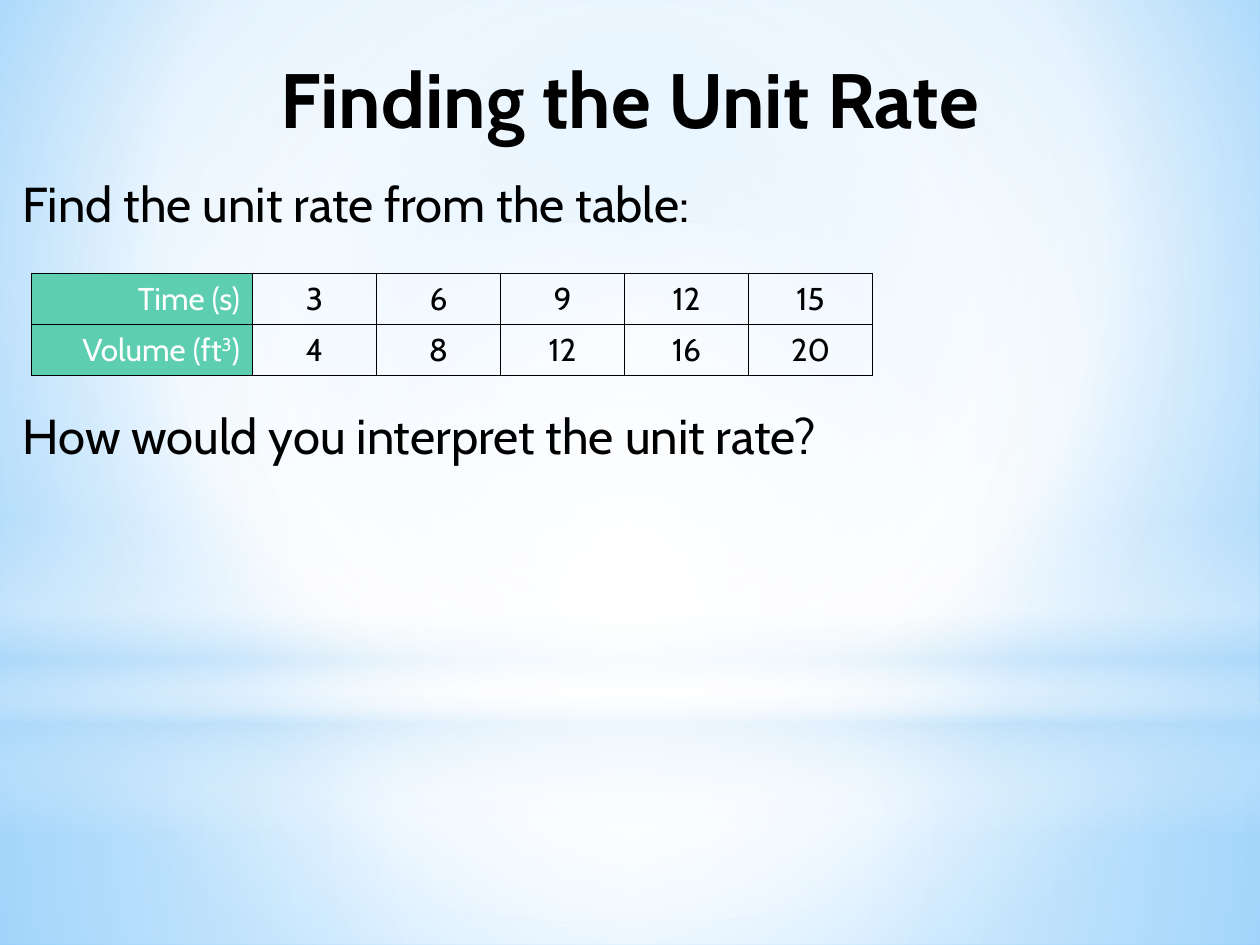
from dataclasses import dataclass

import pptx
import pptx.dml.color
import pptx.enum.shapes
import pptx.enum.text
import pptx.oxml.ns
import pptx.oxml.xmlchemy
import pptx.util
from lxml import etree
from pptx.util import Cm, Pt

ALIGN = pptx.enum.text.PP_ALIGN
SHAPE = pptx.enum.shapes.MSO_SHAPE
qn = pptx.oxml.ns.qn


@dataclass(frozen=True)
class Theme:
    font: str = "Cabin"
    ink: str = "000000"
    label_text: str = "FFFFFF"
    label_fill: str = "5DCEAF"
    white: str = "FFFFFF"
    haze: str = "B4DCFA"
    sky: str = "9ED5FF"
    deep_sky: str = "5BB9FF"
    title_size: int = 44
    body_size: int = 28
    table_size: int = 18


THEME = Theme()
CENTRE = (50, 50, 50, 50)

# Outline, (left, top, width, height) in cm, (position, colour, opacity) stops, focus
GLOWS = [
    (SHAPE.RECTANGLE, (0, 14.17, 25.4, 4.88),
     [(0, THEME.white, 91), (37, THEME.white, 76), (100, THEME.haze, 79)], CENTRE),
    (SHAPE.RECTANGLE, (0, 0, 25.4, 14.17),
     [(0, THEME.white, 89), (48, THEME.white, 62), (100, THEME.haze, 79)], CENTRE),
    (SHAPE.RECTANGLE, (0, 10.46, 25.4, 6.35),
     [(0, THEME.white, 0), (29, THEME.white, 30), (45, THEME.haze, 40),
      (55, THEME.white, 26), (65, THEME.haze, 60), (100, THEME.white, 0)], None),
    (SHAPE.OVAL, (0, 4.45, 25.4, 14.17),
     [(0, THEME.white, 100), (56, THEME.white, 0)], CENTRE),
]

RATES = [
    ("Time (s)", [3, 6, 9, 12, 15]),
    ("Volume (ft^3^)", [4, 8, 12, 16, 20]),
]


def child(parent, tag, **attributes):
    element = etree.SubElement(parent, qn(tag))
    for key, value in attributes.items():
        element.set(key, str(value))
    return element


def set_gradient(fill, owner, stops, focus):
    """Fill with a circle around focus, or from top to bottom when focus is None."""
    fill.gradient()
    gradient = next(owner.iter(qn("a:gradFill")))
    for part in list(gradient):
        gradient.remove(part)
    stop_list = child(gradient, "a:gsLst")
    for position, colour, opacity in stops:
        stop = child(stop_list, "a:gs", pos=position * 1000)
        tint = child(stop, "a:srgbClr", val=colour)
        if opacity < 100:
            child(tint, "a:alpha", val=opacity * 1000)
    if focus is None:
        child(gradient, "a:lin", ang=5400000, scaled=0)
    else:
        circle = child(gradient, "a:path", path="circle")
        edges = {edge: share * 1000 for edge, share in zip("ltrb", focus)}
        child(circle, "a:fillToRect", **edges)


def add_backdrop(slide):
    """Colour the background and lay the glows behind all text."""
    sky_stops = [(0, THEME.sky, 100), (60, THEME.white, 100), (100, THEME.deep_sky, 100)]
    set_gradient(slide.background.fill, slide.element, sky_stops, (20, 10, 20, 60))
    tree = slide.shapes.element
    for depth, (outline, box, stops, focus) in enumerate(GLOWS, start=2):
        glow = slide.shapes.add_shape(outline, *map(Cm, box))
        glow.shadow.inherit = False
        glow.line.fill.background()
        set_gradient(glow.fill, glow.element, stops, focus)
        tree.insert(depth, glow.element)


def style_paragraph(paragraph, size, colour, alignment, bold=False):
    paragraph.alignment = alignment
    paragraph.space_before = Pt(0)
    font = paragraph.font
    font.name, font.size, font.bold = THEME.font, Pt(size), bold
    font.color.rgb = pptx.dml.color.RGBColor.from_string(colour)


def place(holder, left, top, width, height):
    holder.left, holder.top = Cm(left), Cm(top)
    holder.width, holder.height = Cm(width), Cm(height)


def set_title(title, text):
    place(title, 1.27, 0.76, 22.86, 2.41)
    title.text_frame.text = text
    style_paragraph(title.text_frame.paragraphs[0], THEME.title_size, THEME.ink,
                    ALIGN.CENTER, bold=True)


def set_prompt(prompt, text, top, alignment):
    """Place a body line without bullet or indent."""
    place(prompt, 0.2, top, 23.93, 1.45)
    frame = prompt.text_frame
    frame.text = text
    frame.auto_size = pptx.enum.text.MSO_AUTO_SIZE.SHAPE_TO_FIT_TEXT
    paragraph = frame.paragraphs[0]
    style_paragraph(paragraph, THEME.body_size, THEME.ink, alignment)
    properties = paragraph._p.get_or_add_pPr()
    properties.set("marL", "0")
    properties.set("indent", "0")
    properties.insert_element_before(
        etree.Element(qn("a:buNone")), "a:tabLst", "a:defRPr", "a:extLst")


def set_borders(cell):
    properties = cell._tc.get_or_add_tcPr()
    for index, side in enumerate(("a:lnL", "a:lnR", "a:lnT", "a:lnB")):
        line = child(properties, side, w=Pt(1))
        child(child(line, "a:solidFill"), "a:srgbClr", val=THEME.ink)
        properties.insert(index, line)


def fill_cell(cell, text, colour, alignment, fill=None):
    """Write a cell; text between carets is raised."""
    paragraph = cell.text_frame.paragraphs[0]
    for index, part in enumerate(text.split("^")):
        run = paragraph.add_run()
        run.text = part
        if index % 2:
            run.font._element.set("baseline", "30000")
    style_paragraph(paragraph, THEME.table_size, colour, alignment)
    if fill:
        cell.fill.solid()
        cell.fill.fore_color.rgb = pptx.dml.color.RGBColor.from_string(fill)
    else:
        cell.fill.background()
    set_borders(cell)


def add_rate_table(slide):
    label_width, value_width, row_height = Cm(4.45), Cm(2.5), Cm(1.03)
    value_count = len(RATES[0][1])
    table = slide.shapes.add_table(
        len(RATES), value_count + 1, Cm(0.64), Cm(5.51),
        label_width + value_count * value_width, len(RATES) * row_height).table
    table.first_row = table.horz_banding = False
    for index, column in enumerate(table.columns):
        column.width = value_width if index else label_width
    for row, (label, values) in enumerate(RATES):
        table.rows[row].height = row_height
        fill_cell(table.cell(row, 0), label, THEME.label_text, ALIGN.RIGHT, THEME.label_fill)
        for column, value in enumerate(values, start=1):
            fill_cell(table.cell(row, column), str(value), THEME.ink, ALIGN.CENTER)


def main():
    deck = pptx.Presentation()
    deck.slide_width, deck.slide_height = Cm(25.4), Cm(19.05)
    two_content = deck.slide_layouts[3]
    slide = deck.slides.add_slide(two_content)
    title, task, question = slide.placeholders
    add_backdrop(slide)
    set_title(title, "Finding the Unit Rate")
    set_prompt(task, "Find the unit rate from the table:", 3.38, ALIGN.LEFT)
    add_rate_table(slide)
    set_prompt(question, "How would you interpret the unit rate?", 8.05, ALIGN.JUSTIFY)
    deck.save("out.pptx")


if __name__ == "__main__":
    main()
